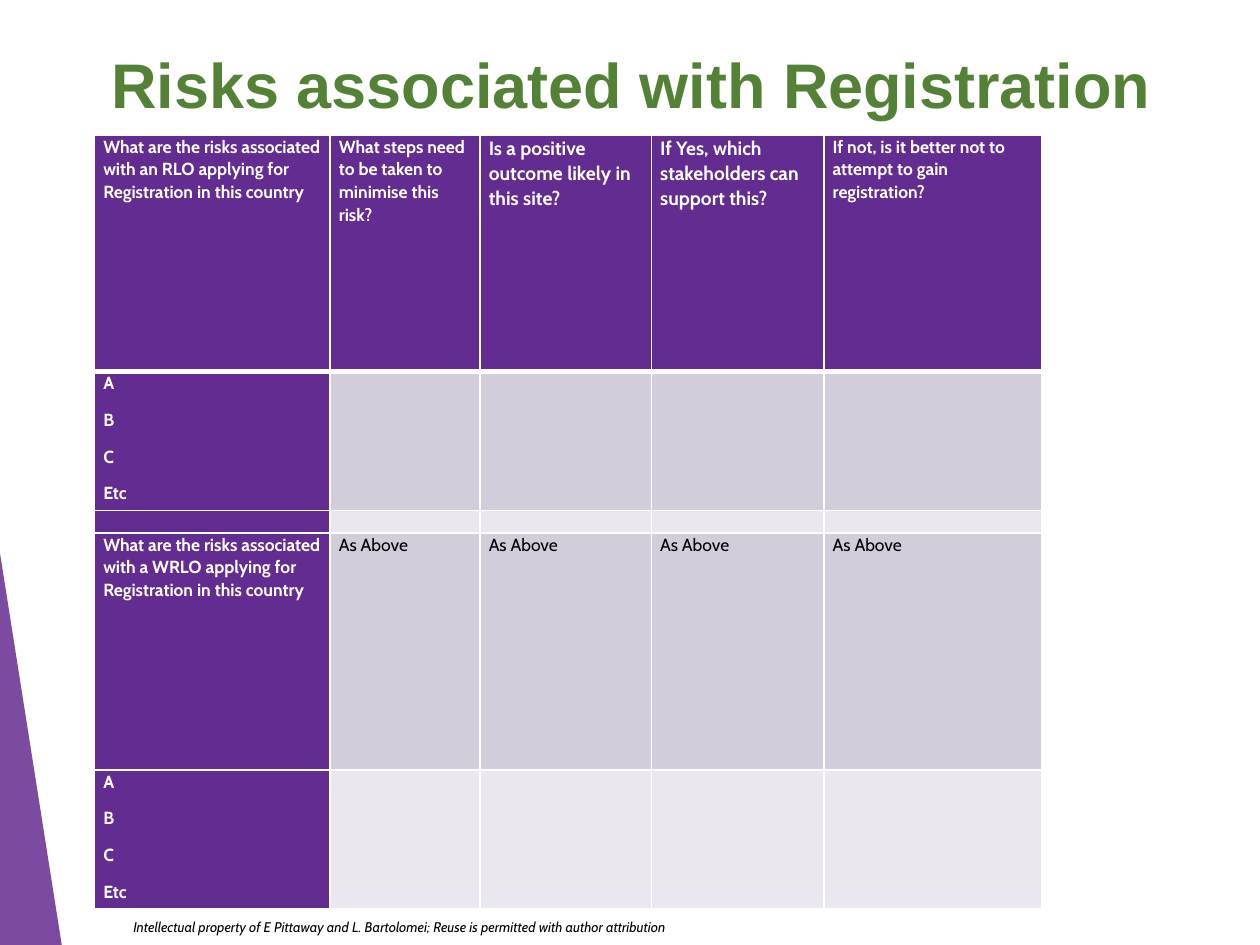
from pptx import Presentation
from pptx.dml.color import RGBColor
from pptx.enum.text import MSO_ANCHOR as Anchor, PP_ALIGN as Align
from pptx.util import Inches, Pt
from lxml.etree import SubElement as Sub

NS = "{http://schemas.openxmlformats.org/drawingml/2006/main}"
PURPLE, WHITE, BLACK, GREEN = "632C90", "FFFFFF", "000000", "538135"
BANDS = ["D3CDDB", "EAE8EE"]
WIDTHS = [1.87, 1.19, 1.36, 1.37, 1.73]
HEIGHTS = [1.88, 1.1, 0.18, 1.88, 1.1]
ITEMS = "A\nB\nC\nEtc"
ROWS = [
    ["What are the risks associated with an RLO applying for Registration in this country",
     "What steps need to be taken to minimise this risk?",
     "Is a positive outcome likely in this site?",
     "If Yes, which stakeholders can support this?",
     "If not, is it better not to attempt to gain registration?"],
    [ITEMS] + [""] * 4,
    [""] * 5,
    ["What are the risks associated with a WRLO applying for Registration in this country"]
    + ["As Above"] * 4,
    [ITEMS] + [""] * 4,
]


def color(code):
    return RGBColor.from_string(code)


class Deck:
    font = "Cabin"

    def __init__(self):
        self.prs = Presentation()
        self.prs.slide_width, self.prs.slide_height = Inches(10), Inches(7.5)
        self.slide = self.prs.slides.add_slide(self.prs.slide_layouts[6])

    def run(self, para, text, size, ink, bold=False, slant=False, font=None):
        run = para.add_run()
        run.text = text
        face = run.font
        face.name, face.size = font or self.font, Pt(size)
        face.bold, face.italic = bold, slant
        face.color.rgb = color(ink)

    def wedge(self, points, fill, alpha):
        pts = [(Inches(x), Inches(y)) for x, y in points]
        draft = self.slide.shapes.build_freeform(*pts[0])
        draft.add_line_segments(pts[1:], close=True)
        shape = draft.convert_to_shape()
        shape.shadow.inherit = False
        shape.line.fill.background()
        shape.fill.solid()
        shape.fill.fore_color.rgb = color(fill)
        tint = shape._element.spPr.find(f"{NS}solidFill/{NS}srgbClr")
        Sub(tint, NS + "alpha", val=str(alpha * 1000))

    def text(self, box, text, size, ink, align=Align.LEFT, anchor=Anchor.TOP, pad=0.1, **style):
        frame = self.slide.shapes.add_textbox(*map(Inches, box)).text_frame
        frame.word_wrap = True
        frame.vertical_anchor = anchor
        frame.margin_left = frame.margin_right = Inches(pad)
        frame.margin_top = frame.margin_bottom = Inches(pad / 2)
        para = frame.paragraphs[0]
        para.alignment = align
        self.run(para, text, size, ink, **style)

    def edges(self, cell, row):
        props = cell._tc.get_or_add_tcPr()
        thick = {(0, "B"), (1, "T")}
        for side in "LRTB":
            width = Pt(3 if (row, side) in thick else 1)
            line = Sub(props, f"{NS}ln{side}", w=str(width))
            Sub(Sub(line, NS + "solidFill"), NS + "srgbClr", val=WHITE)

    def cell(self, cell, row, col, text):
        head = row == 0 or col == 0
        self.edges(cell, row)
        cell.fill.solid()
        cell.fill.fore_color.rgb = color(PURPLE if head else BANDS[(row - 1) % 2])
        cell.margin_left = cell.margin_right = Inches(0.07)
        cell.margin_top = cell.margin_bottom = 0
        frame = cell.text_frame
        if not text:
            Sub(frame.paragraphs[0]._p, NS + "endParaRPr", sz="900")
            return
        size = 11 if row == 0 and col in (2, 3) else 10
        for i, part in enumerate(text.split("\n")):
            para = frame.add_paragraph() if i else frame.paragraphs[0]
            para.line_spacing, para.space_after = 1.07, Pt(8)
            self.run(para, part, size, WHITE if head else BLACK, bold=head)

    def table(self, left, top, widths, heights, rows):
        size = sum(widths), sum(heights)
        box = map(Inches, (left, top, *size))
        table = self.slide.shapes.add_table(len(rows), len(widths), *box).table
        for col, width in zip(table.columns, widths):
            col.width = Inches(width)
        for row, height in zip(table.rows, heights):
            row.height = Inches(height)
        for r, row in enumerate(rows):
            for c, text in enumerate(row):
                self.cell(table.cell(r, c), r, c, text)


def main():
    deck = Deck()
    deck.wedge([(0, 4.39), (0.49, 7.5), (0, 7.5)], PURPLE, 85)
    deck.text((0.96, 7.24, 5.8, 0.23),
              "Intellectual property of E Pittaway and L. Bartolomei; "
              "Reuse is permitted with author attribution", 8, BLACK, slant=True)
    deck.text((0.75, 0.27, 8.52, 0.69), "Risks associated with Registration", 36, GREEN,
              Align.CENTER, Anchor.BOTTOM, pad=0, bold=True, font="Arial")
    deck.table(0.75, 1.07, WIDTHS, HEIGHTS, ROWS)
    deck.prs.save("out.pptx")


if __name__ == "__main__":
    main()
